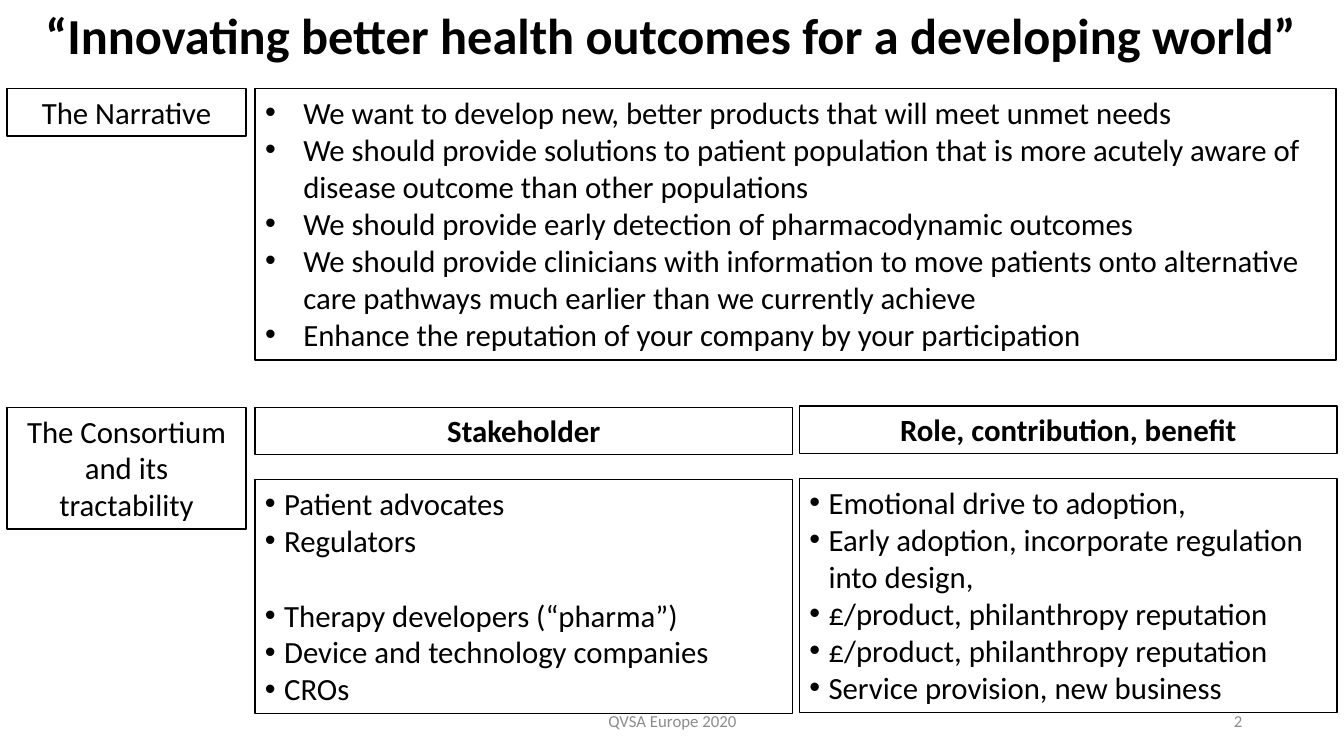
from pptx import Presentation
from pptx.dml.color import RGBColor
from pptx.enum.shapes import MSO_SHAPE
from pptx.enum.text import MSO_ANCHOR as Anchor, PP_ALIGN as Align
from pptx.oxml.ns import qn
from pptx.util import Inches, Pt
from lxml import etree

COLORS = {"ink": "000000", "footer": "8C8C8C"}
FONT = "Calibri"
LINE_GAP = Pt(26.85)  # one line of 22 pt text

prs = Presentation()
prs.slide_width, prs.slide_height = Inches(13.33), Inches(7.5)
slide = prs.slides.add_slide(prs.slide_layouts[6])


def write(frame, lines, align=Align.LEFT, anchor=Anchor.TOP, size=22,
          color="ink", bold=False, indent=0):
    """Fill a text frame, with hanging bullets when an indent is given."""
    frame.word_wrap = True
    frame.vertical_anchor = anchor
    for i, line in enumerate(lines):
        para = frame.paragraphs[0] if i == 0 else frame.add_paragraph()
        para.alignment = align
        run = para.add_run()
        run.text = line
        run.font.color.rgb = RGBColor.from_string(COLORS[color])
        for key, value in {"name": FONT, "size": Pt(size), "bold": bold}.items():
            setattr(run.font, key, value)
        if indent:
            props = para._p.get_or_add_pPr()
            props.set("marL", str(Inches(indent)))
            props.set("indent", str(-Inches(indent)))
            etree.SubElement(props, qn("a:buFont")).set("typeface", "Arial")
            etree.SubElement(props, qn("a:buChar")).set("char", "•")


def add_panel(left, top, width, height, lines, **style):
    """Add an outlined box with text."""
    panel = slide.shapes.add_shape(MSO_SHAPE.RECTANGLE, Inches(left), Inches(top),
                                   Inches(width), Inches(height))
    panel.shadow.inherit = False
    panel.fill.background()
    panel.line.color.rgb = RGBColor.from_string(COLORS["ink"])
    panel.line.width = Pt(1)
    write(panel.text_frame, lines, **style)
    return panel


# Title
title = slide.shapes.add_textbox(Inches(0.19), Inches(0.03), Inches(12.93), Inches(0.69))
write(title.text_frame, ["“Innovating better health outcomes for a developing world”"],
      align=Align.CENTER, anchor=Anchor.MIDDLE, size=36, bold=True)
title.text_frame.paragraphs[0].line_spacing = 0.9

# Row labels
label_left, label_width = 0.07, 2.37
for top, height, label in [(0.88, 0.47, "The Narrative"),
                           (4.04, 1.21, "The Consortium and its tractability")]:
    add_panel(label_left, top, label_width, height, [label], align=Align.CENTER)

# Narrative
body_left = 2.53
add_panel(body_left, 0.88, 10.72, 2.69, [
    "We want to develop new, better products that will meet unmet needs",
    "We should provide solutions to patient population that is more acutely aware of "
    "disease outcome than other populations",
    "We should provide early detection of pharmacodynamic outcomes",
    "We should provide clinicians with information to move patients onto alternative "
    "care pathways much earlier than we currently achieve",
    "Enhance the reputation of your company by your participation",
], indent=0.38)

# Consortium: each column has a heading above its list
stakeholders = ["Patient advocates", "Regulators", "Therapy developers (“pharma”)",
                "Device and technology companies", "CROs"]
roles = ["Emotional drive to adoption,",
         "Early adoption, incorporate regulation into design,",
         "£/product, philanthropy reputation",
         "£/product, philanthropy reputation",
         "Service provision, new business"]
column_width = 5.33
columns = []
for left, top, heading, entries in [
        (body_left, 4.04, "Stakeholder", stakeholders),
        (7.93, 4.03, "Role, contribution, benefit", roles)]:
    add_panel(left, top, column_width, 0.47, [heading], align=Align.CENTER, bold=True)
    columns.append(add_panel(left, top + 0.72, column_width, 2.32, entries, indent=0.19))

# The regulators' role takes two lines, so the next stakeholder starts one line lower
columns[0].text_frame.paragraphs[2].space_before = LINE_GAP

# Footer and slide number
for left, width, align, text in [(4.42, 4.5, Align.CENTER, "QVSA Europe 2020"),
                                 (9.42, 3, Align.RIGHT, "2")]:
    footer = slide.shapes.add_textbox(Inches(left), Inches(6.95), Inches(width), Inches(0.4))
    write(footer.text_frame, [text], align=align, anchor=Anchor.MIDDLE,
          size=12, color="footer")

prs.save("out.pptx")
